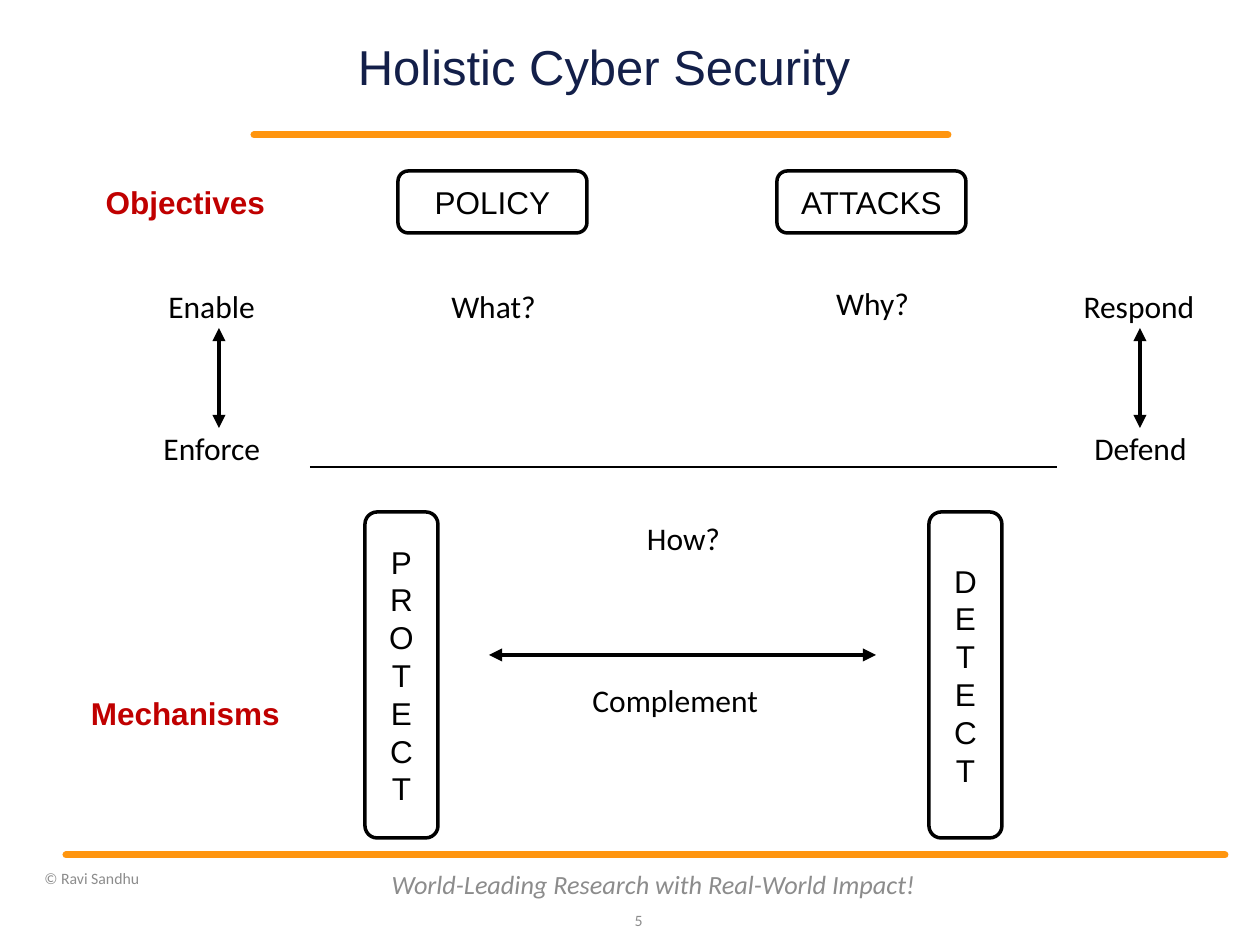
from dataclasses import dataclass

from lxml import etree
from pptx import Presentation
from pptx import util as u
from pptx.dml.color import RGBColor
from pptx.enum import shapes, text
from pptx.oxml import ns


@dataclass(frozen=True)
class Theme:
    heading: str = "Arial"
    body: str = "Calibri"
    navy: str = "131F49"
    orange: str = "FF950E"
    red: str = "C00000"
    black: str = "000000"
    white: str = "FFFFFF"
    gray: str = "8C8C8C"
    title_size: int = 28
    main_size: int = 18
    motto_size: int = 15
    small_size: int = 9


THEME = Theme()
LEFT, CENTER, RIGHT = text.PP_ALIGN.LEFT, text.PP_ALIGN.CENTER, text.PP_ALIGN.RIGHT

# Boxes are (left, top, width, height) in px, 126 px to the inch.
PAGE_SIZE = (1260, 945)
TITLE = ("Holistic Cyber Security", (273, 38, 662, 64))
FOOTERS = [
    ("World-Leading Research with Real-World Impact!", (378, 859, 551, 50), CENTER, THEME.motto_size, True),
    ("5", (605, 895, 50, 50), RIGHT, THEME.small_size, False),
    ("© Ravi Sandhu", (32, 856, 346, 45), LEFT, THEME.small_size, False),
]

BAR_SIZE = (189, 62)
OBJECTIVES_TOP, MECHANISMS_TOP = 171, 682
GOALS = [("POLICY", 398), ("ATTACKS", 777)]
ROW_TITLES = [("Objectives", OBJECTIVES_TOP), ("Mechanisms", MECHANISMS_TOP)]
ROW_TITLE_LEFT = 91
PILLARS = [("PROTECT", 365), ("DETECT", 929)]
PILLAR_TOP, PILLAR_SIZE = 512, (73, 326)

LABEL_HEIGHT = 50
LABELS = [  # text, left, top, width, alignment
    ("Complement", 580, 675, 205, LEFT),
    ("How?", 630, 513, 107, CENTER),
    ("What?", 435, 281, 117, CENTER),
    ("Why?", 819, 278, 107, CENTER),
    ("Enforce", 151, 423, 135, LEFT),
    ("Enable", 156, 281, 125, LEFT),
    ("Defend", 1076, 423, 129, CENTER),
    ("Respond", 1063, 281, 152, CENTER),
]

# Lines are (x1, y1, x2, y2).
RULES = [(254, 135, 948, 135), (66, 855, 1225, 855)]
DIVIDER = (310, 467, 1057, 467)
ARROWS = [(489, 655, 876, 655), (219, 428, 219, 328), (1140, 428, 1140, 328)]


def px(*values):
    return [u.Emu(round(value * 914400 / 126)) for value in values]


def write(box, words, size, font, color, align=CENTER, bold=False, italic=False):
    frame = box.text_frame
    frame.text = words
    para = frame.paragraphs[0]
    para.alignment = align
    span = para.runs[0].font
    span.size, span.name = u.Pt(size), font
    span.bold, span.italic = bold, italic
    span.color.rgb = RGBColor.from_string(color)
    return frame


def add_line(page, ends, color, width, cap=None, arrows=False):
    line = page.shapes.add_connector(shapes.MSO_CONNECTOR.STRAIGHT, *px(*ends))
    line.line.color.rgb = RGBColor.from_string(color)
    line.line.width = u.Pt(width)
    stroke = line.line._get_or_add_ln()
    if cap:
        stroke.set("cap", cap)
    if arrows:
        for end in ("a:headEnd", "a:tailEnd"):
            etree.SubElement(stroke, ns.qn(end), type="triangle")
    etree.SubElement(line._element.spPr, ns.qn("a:effectLst"))


def add_card(page, words, box, color=THEME.black, outlined=True, stacked=False):
    """Add a rounded box; stacked text runs downwards, letter by letter."""
    card = page.shapes.add_shape(shapes.MSO_SHAPE.ROUNDED_RECTANGLE, *px(*box))
    card.shadow.inherit = False
    card.fill.solid()
    card.fill.fore_color.rgb = RGBColor.from_string(THEME.white)
    if outlined:
        card.line.color.rgb = RGBColor.from_string(THEME.black)
        card.line.width = u.Pt(2)
    else:
        card.line.fill.background()
    frame = write(card, words, THEME.main_size, THEME.heading, color, bold=not outlined)
    frame.word_wrap = False
    frame.vertical_anchor = text.MSO_ANCHOR.MIDDLE
    if stacked:
        frame._txBody.bodyPr.set("vert", "wordArtVert")


def add_title(page):
    words, place = TITLE
    box = page.shapes.add_textbox(*px(*place))
    frame = write(box, words, THEME.title_size, THEME.heading, THEME.navy)
    frame.word_wrap = True
    frame.vertical_anchor = text.MSO_ANCHOR.MIDDLE
    frame.margin_left = frame.margin_right = frame.margin_top = frame.margin_bottom = 0
    frame.paragraphs[0].line_spacing = 0.9


def add_footers(page):
    for words, place, align, size, italic in FOOTERS:
        box = page.shapes.add_textbox(*px(*place))
        frame = write(box, words, size, THEME.body, THEME.gray, align, italic=italic)
        frame.word_wrap = True
        frame.vertical_anchor = text.MSO_ANCHOR.MIDDLE


def add_labels(page):
    for words, left, top, width, align in LABELS:
        box = page.shapes.add_textbox(*px(left, top, width, LABEL_HEIGHT))
        frame = write(box, words, THEME.main_size, THEME.body, THEME.black, align)
        frame.word_wrap = False
        frame.auto_size = text.MSO_AUTO_SIZE.SHAPE_TO_FIT_TEXT


def main():
    deck = Presentation()
    deck.slide_width, deck.slide_height = px(*PAGE_SIZE)
    page = deck.slides.add_slide(deck.slide_layouts[6])

    for rule in RULES:
        add_line(page, rule, THEME.orange, 4, cap="rnd")
    add_footers(page)
    add_title(page)
    for words, left in PILLARS:
        add_card(page, words, (left, PILLAR_TOP, *PILLAR_SIZE), stacked=True)
    for words, left in GOALS:
        add_card(page, words, (left, OBJECTIVES_TOP, *BAR_SIZE))
    for words, top in ROW_TITLES:
        add_card(page, words, (ROW_TITLE_LEFT, top, *BAR_SIZE), THEME.red, outlined=False)
    add_line(page, DIVIDER, THEME.black, 0.75)
    for arrow in ARROWS:
        add_line(page, arrow, THEME.black, 2.5, arrows=True)
    add_labels(page)

    deck.save("out.pptx")


if __name__ == "__main__":
    main()
